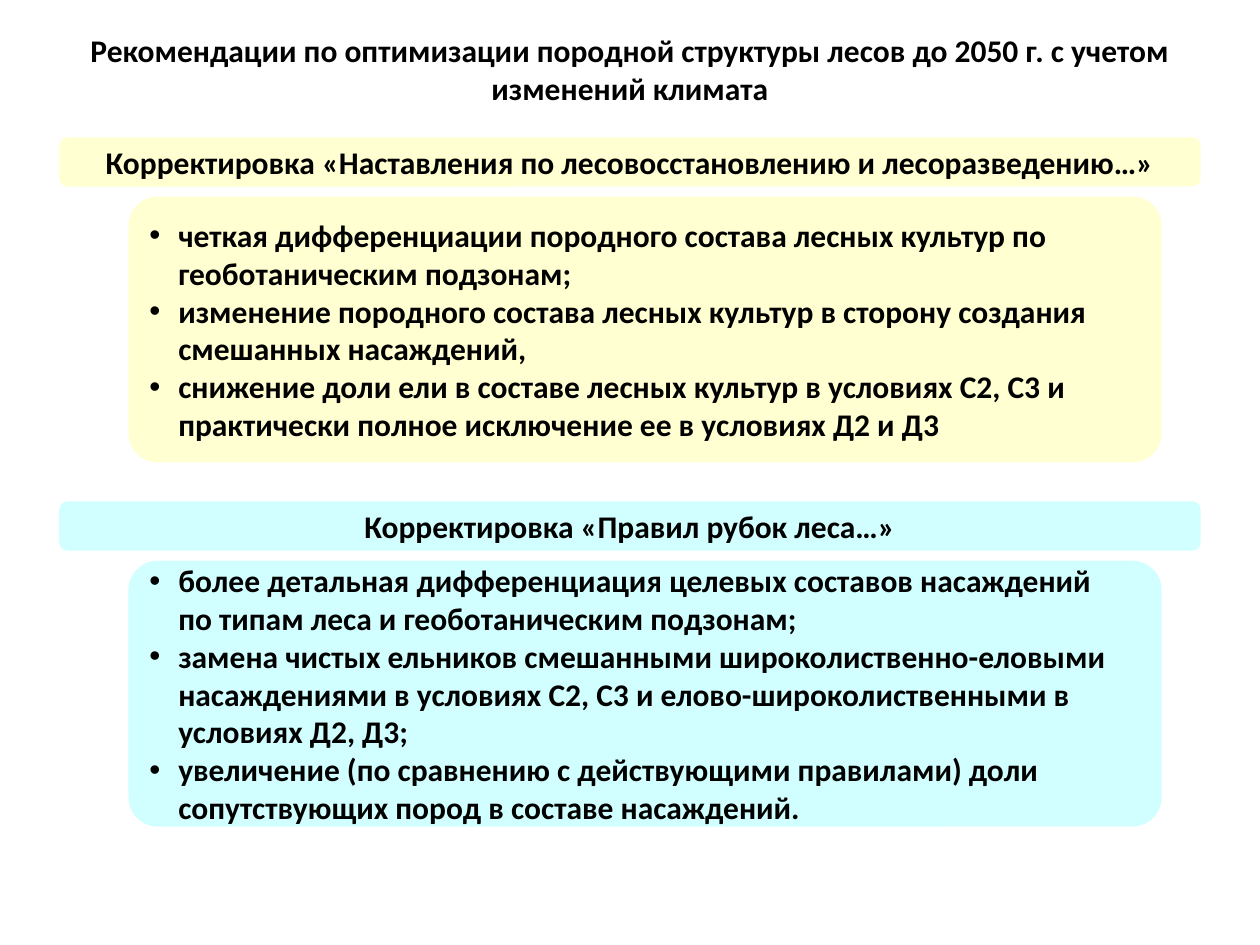
from typing import NamedTuple

from lxml.etree import SubElement
from pptx import Presentation
from pptx.dml.color import RGBColor
from pptx.enum.shapes import MSO_SHAPE
from pptx.enum.text import MSO_ANCHOR, PP_ALIGN
from pptx.oxml.ns import qn
from pptx.util import Pt

WHITE = RGBColor(0xFF, 0xFF, 0xFF)
BLACK = RGBColor(0, 0, 0)
YELLOW = RGBColor(0xFF, 0xFF, 0xCC)
CYAN = RGBColor(0xCC, 0xFF, 0xFF)

FONT = "Calibri"
SIZE = 18
HANG = 16.5
LEFT, WIDE = 33.84, 652.32
INNER, SLIM = 73.44, 590.4
HEAD, BODY = 28.08, 151.92
DROP = 33.84


class Part(NamedTuple):
    top: float
    color: RGBColor
    alpha: int
    head: str
    items: list[str]


PARTS = [
    Part(78.48, YELLOW, 87,
         "Корректировка «Наставления по лесовосстановлению и лесоразведению…»",
         ["четкая дифференциации породного состава лесных культур по геоботаническим подзонам;",
          "изменение породного состава лесных культур в сторону создания смешанных насаждений,",
          "снижение доли ели в составе лесных культур в условиях С2, С3 и практически полное "
          "исключение ее в условиях Д2 и Д3"]),
    Part(286.56, CYAN, 89,
         "Корректировка «Правил рубок леса…»",
         ["более детальная дифференциация целевых составов насаждений по типам леса и "
          "геоботаническим подзонам;",
          "замена чистых ельников смешанными широколиственно-еловыми насаждениями в условиях "
          "С2, С3 и елово-широколиственными в условиях Д2, Д3;",
          "увеличение (по сравнению с действующими правилами) доли сопутствующих пород в "
          "составе насаждений."]),
]


def add_box(slide, left: float, top: float, width: float, height: float,
            color: RGBColor, alpha: int, bend: float | None = None):
    box = slide.shapes.add_shape(MSO_SHAPE.ROUNDED_RECTANGLE,
                                 Pt(left), Pt(top), Pt(width), Pt(height))
    box.shadow.inherit = False
    box.line.fill.background()
    box.fill.solid()
    box.fill.fore_color.rgb = color
    tint = box.fill._xPr.find(qn("a:solidFill"))[0]
    SubElement(tint, qn("a:alpha"), val=str(alpha * 1000))
    if bend is not None:
        box.adjustments[0] = bend
    return box


def write(box, *lines: str, align: PP_ALIGN = PP_ALIGN.CENTER,
          bullet: bool = False, right: float = 7.2) -> None:
    frame = box.text_frame
    frame.word_wrap = True
    frame.vertical_anchor = MSO_ANCHOR.MIDDLE
    frame.margin_right = Pt(right)
    for row, line in enumerate(lines):
        para = frame.add_paragraph() if row else frame.paragraphs[0]
        para.alignment = align
        if bullet:
            props = para._p.get_or_add_pPr()
            props.set("marL", str(Pt(HANG)))
            props.set("indent", str(Pt(-HANG)))
            SubElement(props, qn("a:buFont"), typeface="Arial")
            SubElement(props, qn("a:buChar"), char="•")
        run = para.add_run()
        run.text = line
        font = run.font
        font.name, font.size, font.bold = FONT, Pt(SIZE), True
        font.color.rgb = BLACK


def draw_part(slide, part: Part) -> None:
    head = add_box(slide, LEFT, part.top, WIDE, HEAD, part.color, part.alpha)
    write(head, part.head)
    body = add_box(slide, INNER, part.top + DROP, SLIM, BODY,
                   part.color, part.alpha, bend=0.11)
    write(body, *part.items, align=PP_ALIGN.LEFT, bullet=True, right=19)


def main() -> None:
    deck = Presentation()
    deck.slide_width, deck.slide_height = Pt(720), Pt(540)
    slide = deck.slides.add_slide(deck.slide_layouts[6])
    title = add_box(slide, LEFT, 16.56, WIDE, 45.36, WHITE, 89)
    write(title, "Рекомендации по оптимизации породной структуры лесов до 2050 г. "
                 "с учетом изменений климата")
    for part in PARTS:
        draw_part(slide, part)
    deck.save("out.pptx")


if __name__ == "__main__":
    main()
